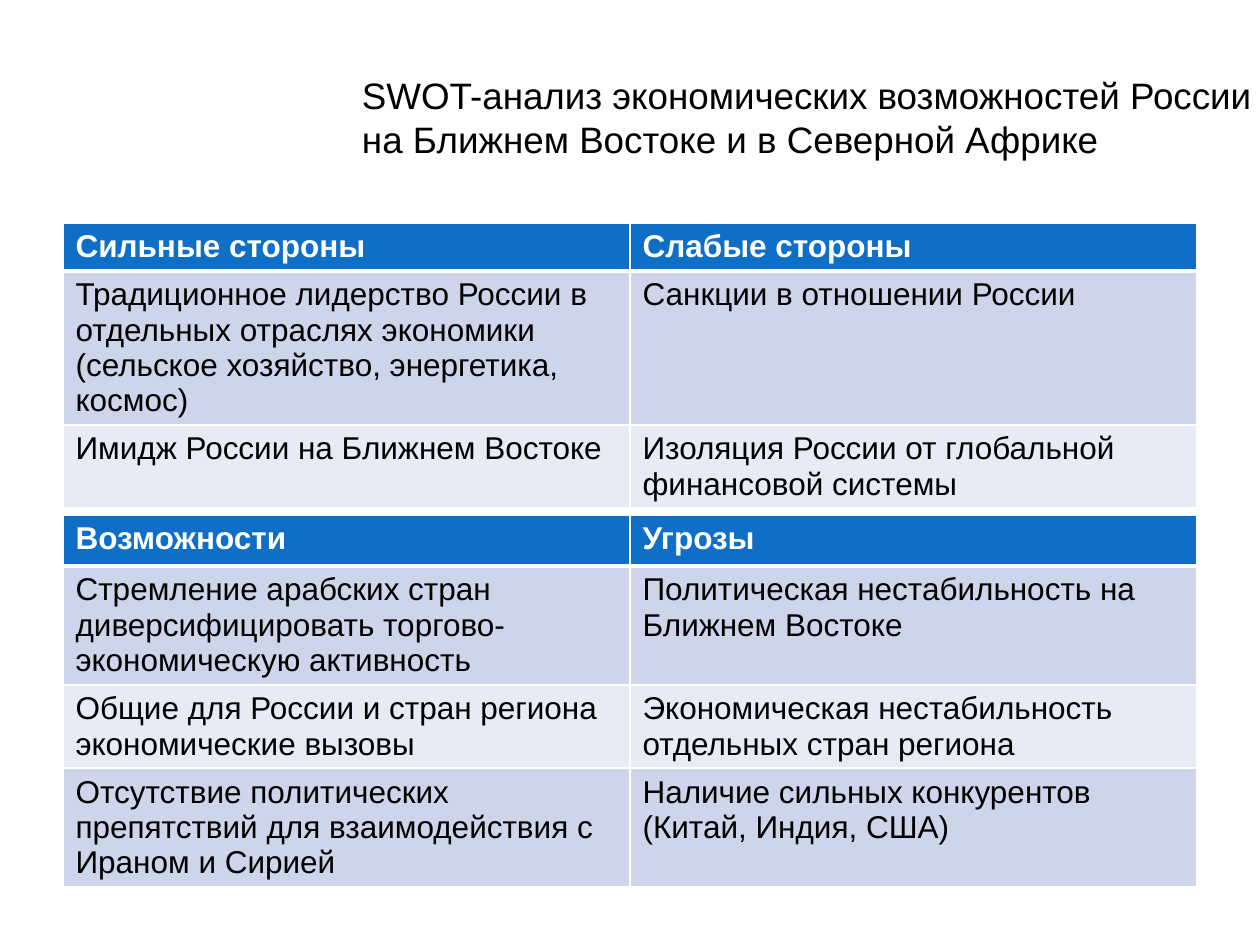
from dataclasses import dataclass

from lxml import etree
from pptx import Presentation
from pptx.dml.color import RGBColor
from pptx.enum.text import MSO_ANCHOR, MSO_AUTO_SIZE, PP_ALIGN
from pptx.oxml.ns import qn
from pptx.util import Emu, Pt

LEFT = PP_ALIGN.LEFT
MIDDLE = MSO_ANCHOR.MIDDLE
NO_FIT = MSO_AUTO_SIZE.NONE

PX_PER_INCH = 126
FONT = "Arial"
WHITE, BLACK, BLUE = "FFFFFF", "000000", "0F6FC6"
BANDS = ("CCD5EA", "E7EBF5")
TABLE_LEFT, COLUMN_WIDTH = 63, 567


@dataclass
class SwotTable:
    top: int
    heights: list[int]
    rows: list[tuple[str, str]]


TITLE = "SWOT-анализ экономических возможностей России на Ближнем Востоке и в Северной Африке"
TABLES = [
    SwotTable(223, [47, 154, 82], [
        ("Сильные стороны", "Слабые стороны"),
        ("Традиционное лидерство России в отдельных отраслях экономики "
         "(сельское хозяйство, энергетика, космос)",
         "Санкции в отношении России"),
        ("Имидж России на Ближнем Востоке",
         "Изоляция России от глобальной финансовой системы"),
    ]),
    SwotTable(515, [51, 119, 83, 118], [
        ("Возможности", "Угрозы"),
        ("Стремление арабских стран диверсифицировать торгово-экономическую активность",
         "Политическая нестабильность на Ближнем Востоке"),
        ("Общие для России и стран региона экономические вызовы",
         "Экономическая нестабильность отдельных стран региона"),
        ("Отсутствие политических препятствий для взаимодействия с Ираном и Сирией",
         "Наличие сильных конкурентов (Китай, Индия, США)"),
    ]),
]


def px(n: int) -> Emu:
    return Emu(round(n * 914400 / PX_PER_INCH))


def rgb(color: str) -> RGBColor:
    return RGBColor.from_string(color)


def style(p, size: int, color: str, bold: bool = False) -> None:
    p.font.name = FONT
    p.font.size = Pt(size)
    p.font.bold = bold
    p.font.color.rgb = rgb(color)


def add_border(cell, side: str, width: int) -> None:
    ln = etree.SubElement(cell._tc.get_or_add_tcPr(), qn(f"a:ln{side}"), w=str(Pt(width)))
    fill = etree.SubElement(ln, qn("a:solidFill"))
    etree.SubElement(fill, qn("a:srgbClr"), val=WHITE)


def draw_title(s) -> None:
    sp = s.shapes.title
    sp.left, sp.top, sp.width, sp.height = px(362), px(38), px(898), px(157)
    tf = sp.text_frame
    tf.text = TITLE
    tf.word_wrap = True
    tf.auto_size = NO_FIT
    tf.vertical_anchor = MIDDLE
    tf.margin_left = tf.margin_right = tf.margin_top = tf.margin_bottom = 0
    p = tf.paragraphs[0]
    p.alignment = LEFT
    style(p, 21, BLACK)


def draw_cell(cell, text: str, row: int) -> None:
    header = row == 0
    # Borders go before the fill in the cell properties
    widths = {"L": 1, "R": 1, "T": 3 if row == 1 else 1, "B": 3 if header else 1}
    for side, width in widths.items():
        add_border(cell, side, width)
    cell.fill.solid()
    cell.fill.fore_color.rgb = rgb(BLUE if header else BANDS[(row - 1) % 2])
    cell.text = text
    style(cell.text_frame.paragraphs[0], 18, WHITE if header else BLACK, header)


def draw_table(s, spec: SwotTable) -> None:
    frame = s.shapes.add_table(len(spec.rows), 2, px(TABLE_LEFT), px(spec.top),
                               px(2 * COLUMN_WIDTH), px(sum(spec.heights)))
    table = frame.table
    for column in table.columns:
        column.width = px(COLUMN_WIDTH)
    for i, (height, texts) in enumerate(zip(spec.heights, spec.rows)):
        table.rows[i].height = px(height)
        for j, text in enumerate(texts):
            draw_cell(table.cell(i, j), text, i)


def main() -> None:
    prs = Presentation()
    prs.slide_width, prs.slide_height = px(1260), px(945)
    s = prs.slides.add_slide(prs.slide_layouts[5])  # title only
    draw_title(s)
    for spec in TABLES:
        draw_table(s, spec)
    prs.save("out.pptx")


if __name__ == "__main__":
    main()
